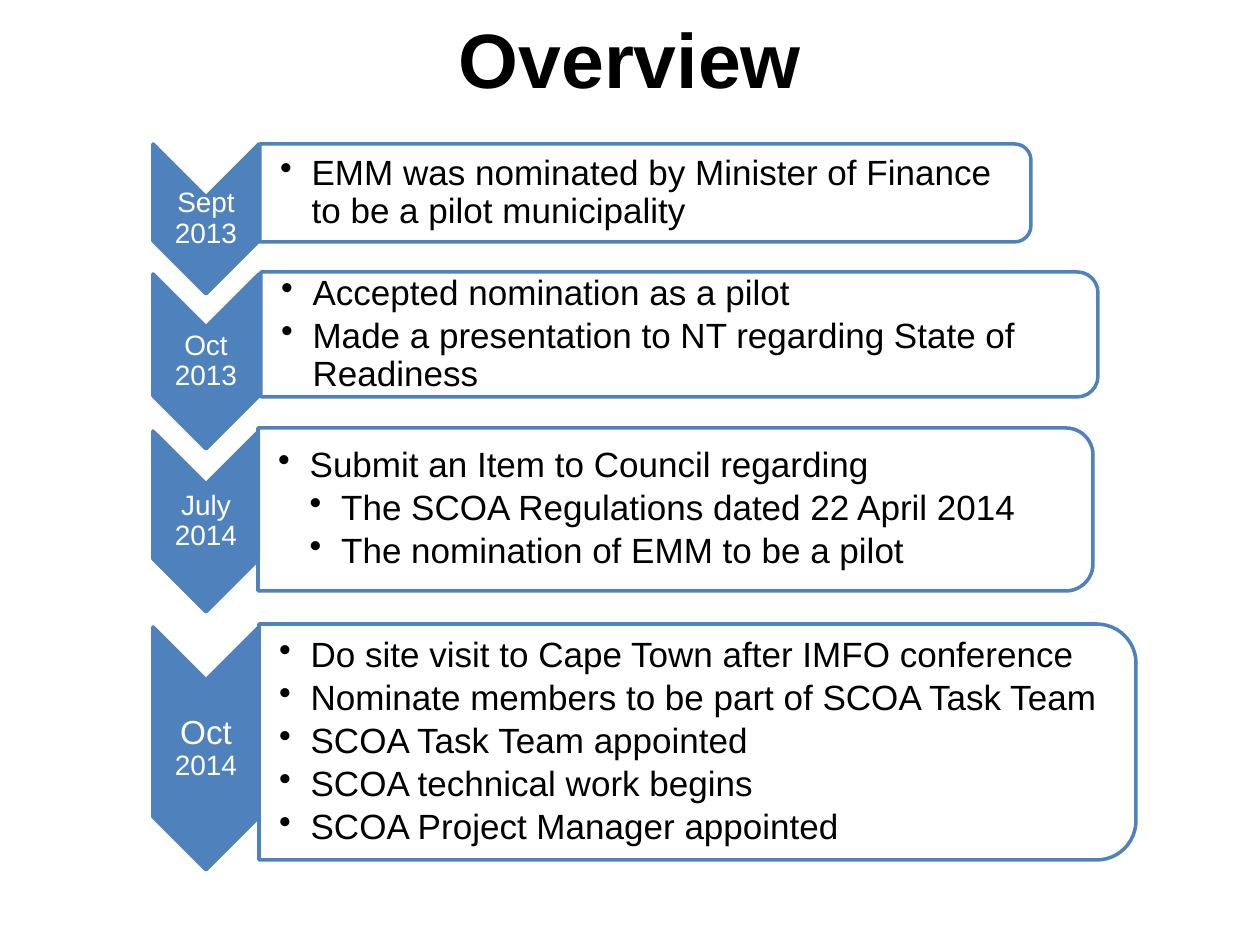
from lxml import etree
from pptx import Presentation
from pptx import util as u
from pptx.dml import color
from pptx.enum import shapes, text
from pptx.oxml import ns

PX = u.Inches(1) // 126
BLUE, WHITE, BLACK = "4F81BD", "FFFFFF", "000000"
CHEVRON_LEFT, CHEVRON_WIDTH = 153, 106
POINT_DEPTH = CHEVRON_WIDTH // 2
INDENT = u.Inches(0.25)

STEPS = [
    (144, 150, (260, 144, 771, 98), [("Sept 2013", 16)],
     [(1, "EMM was nominated by Minister of Finance to be a pilot municipality")]),
    (274, 175, (261, 272, 837, 125), [("Oct 2013", 16)],
     [(1, "Accepted nomination as a pilot"),
      (1, "Made a presentation to NT regarding State of Readiness")]),
    (431, 181, (258, 428, 835, 163), [("July 2014", 16)],
     [(1, "Submit an Item to Council regarding"),
      (2, "The SCOA Regulations dated 22 April 2014"),
      (2, "The nomination of EMM to be a pilot")]),
    (627, 243, (259, 624, 877, 236), [("Oct ", 19), ("2014", 16)],
     [(1, "Do site visit to Cape Town after IMFO conference"),
      (1, "Nominate members to be part of SCOA Task Team"),
      (1, "SCOA Task Team appointed"),
      (1, "SCOA technical work begins"),
      (1, "SCOA Project Manager appointed")]),
]


def add_run(paragraph, words, size, hex_color, bold=False):
    run = paragraph.add_run()
    run.text = words
    run.font.name = "Arial"
    run.font.size = u.Pt(size)
    run.font.bold = bold
    run.font.color.rgb = color.RGBColor.from_string(hex_color)


def add_frame(left, top, width, height, left_inset):
    box = slide.shapes.add_textbox(left * PX, top * PX, width * PX, height * PX)
    frame = box.text_frame
    frame.word_wrap = True
    frame.vertical_anchor = text.MSO_ANCHOR.MIDDLE
    frame.margin_left = u.Inches(left_inset)
    frame.margin_top = frame.margin_right = frame.margin_bottom = u.Inches(0.01)
    return frame


prs = Presentation()
prs.slide_width, prs.slide_height = 1260 * PX, 945 * PX
slide = prs.slides.add_slide(prs.slide_layouts[5])

title = slide.shapes.title
title.left, title.top, title.width, title.height = 63 * PX, 0, 1134 * PX, 116 * PX
title.text_frame.vertical_anchor = text.MSO_ANCHOR.MIDDLE
heading = title.text_frame.paragraphs[0]
heading.alignment = text.PP_ALIGN.CENTER
add_run(heading, "Overview", 44, BLACK, bold=True)

for chevron_top, chevron_height, panel_area, date_runs, points in STEPS:
    left, top, width, height = panel_area
    chevron_area = (CHEVRON_LEFT, chevron_top, CHEVRON_WIDTH, chevron_height)
    for kind, area, fill in (
        (shapes.MSO_SHAPE.CHEVRON, chevron_area, BLUE),
        (shapes.MSO_SHAPE.ROUND_2_SAME_RECTANGLE, panel_area, WHITE),
    ):
        x, y, w, h = area
        outline = slide.shapes.add_shape(
            kind, (2 * x + w - h) * PX // 2, (2 * y + h - w) * PX // 2, h * PX, w * PX)
        outline.rotation = 90
        outline.shadow.inherit = False
        outline.fill.solid()
        outline.fill.fore_color.rgb = color.RGBColor.from_string(fill)
        outline.line.color.rgb = color.RGBColor.from_string(BLUE)
        outline.line.width = u.Pt(2)

        if fill == BLUE:
            label = add_frame(x, y + POINT_DEPTH, w, h - 2 * POINT_DEPTH, 0.01)
            date = label.paragraphs[0]
            date.alignment = text.PP_ALIGN.CENTER
            date.line_spacing = 0.9
            for words, size in date_runs:
                add_run(date, words, size, WHITE)
        else:
            panel_color = outline.fill._xPr.find(".//" + ns.qn("a:srgbClr"))
            etree.SubElement(panel_color, ns.qn("a:alpha"), val="90000")

    inset = round(height * 0.049)
    details = add_frame(left, top + inset, width - inset, height - 2 * inset, 0.16)
    for index, (level, words) in enumerate(points):
        point = details.add_paragraph() if index else details.paragraphs[0]
        point.level = level
        point.line_spacing = 0.9
        point.space_after = u.Pt(3)
        properties = point._p.get_or_add_pPr()
        properties.set("marL", str(level * INDENT))
        properties.set("indent", str(-INDENT))
        etree.SubElement(properties, ns.qn("a:buChar"), char="•")
        add_run(point, words, 20, BLACK)

prs.save("out.pptx")
